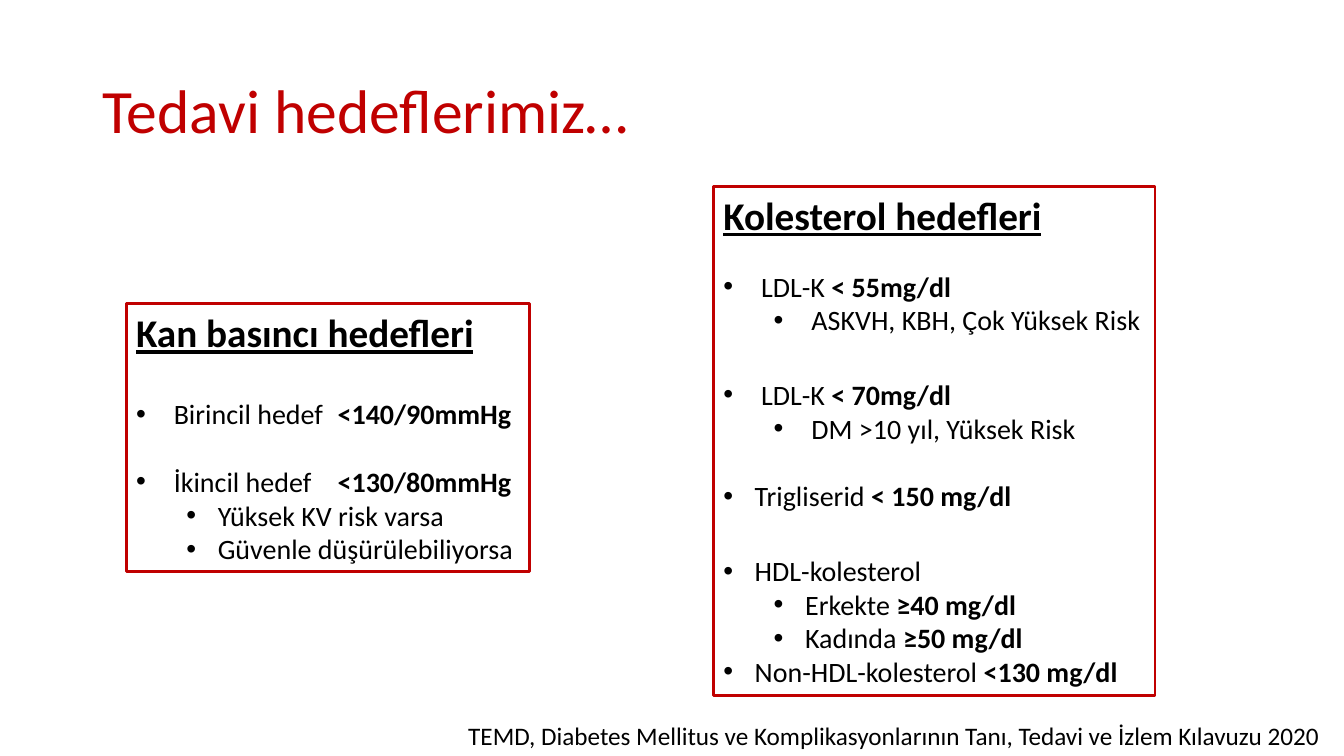
import typing

import lxml.etree
import pptx
import pptx.dml.color
import pptx.enum.shapes
import pptx.enum.text
import pptx.oxml.ns
import pptx.util

Cm = pptx.util.Cm
Pt = pptx.util.Pt
RED = "C00000"
BLACK = "000000"
FONT = "Calibri"


class Run(typing.NamedTuple):
    text: str
    bold: bool = False


class Item(typing.NamedTuple):
    runs: list[Run]
    left: float  # text indent, cm
    hang: float  # bullet hang, cm
    level: int = 0
    gap: float = 0  # space before, pt


class Panel(typing.NamedTuple):
    area: tuple[float, float, float, float]
    head: str
    items: list[Item]


class Label(typing.NamedTuple):
    area: tuple[float, float, float, float]
    text: str
    size: int
    color: str
    anchor: pptx.enum.text.MSO_ANCHOR
    space: float


def color(code: str) -> pptx.dml.color.RGBColor:
    return pptx.dml.color.RGBColor.from_string(code)


def add_run(para, text: str, size: int, tint: str = BLACK,
            bold: bool = False, under: bool = False) -> None:
    run = para.add_run()
    run.text = text
    font = run.font
    font.name, font.size = FONT, Pt(size)
    font.bold, font.underline = bold, under
    font.color.rgb = color(tint)


def add_item(para, item: Item) -> None:
    props = para._p.get_or_add_pPr()
    props.set("marL", str(Cm(item.left)))
    props.set("indent", str(-Cm(item.hang)))
    for tag, key, value in (("a:buFont", "typeface", "Arial"),
                            ("a:buChar", "char", "•")):
        mark = lxml.etree.SubElement(props, pptx.oxml.ns.qn(tag))
        mark.set(key, value)
    para.level = item.level
    para.alignment = pptx.enum.text.PP_ALIGN.LEFT
    para.space_before = Pt(item.gap)
    for run in item.runs:
        add_run(para, run.text, 20, bold=run.bold)


def add_panel(slide, panel: Panel) -> None:
    kind = pptx.enum.shapes.MSO_SHAPE.RECTANGLE
    box = slide.shapes.add_shape(kind, *map(Cm, panel.area))
    box.shadow.inherit = False
    box.fill.background()
    box.line.color.rgb = color(RED)
    box.line.width = Pt(2)
    frame = box.text_frame
    frame.word_wrap = True
    frame.vertical_anchor = pptx.enum.text.MSO_ANCHOR.TOP
    head = frame.paragraphs[0]
    head.alignment = pptx.enum.text.PP_ALIGN.LEFT
    add_run(head, panel.head, 28, bold=True, under=True)
    for item in panel.items:
        add_item(frame.add_paragraph(), item)


def add_label(slide, label: Label) -> None:
    frame = slide.shapes.add_textbox(*map(Cm, label.area)).text_frame
    frame.word_wrap = True
    frame.vertical_anchor = label.anchor
    para = frame.paragraphs[0]
    para.line_spacing = label.space
    add_run(para, label.text, label.size, label.color)


# Title and source line
ANCHOR = pptx.enum.text.MSO_ANCHOR
LABELS = [
    Label((2.33, 1.01, 29.21, 3.68), "Tedavi hedeflerimiz…",
          44, RED, ANCHOR.MIDDLE, 0.9),
    Label((11.55, 18.03, 22.32, 1.02),
          "TEMD, Diabetes Mellitus ve Komplikasyonlarının Tanı, "
          "Tedavi ve İzlem Kılavuzu 2020",
          18, BLACK, ANCHOR.TOP, 1.0),
]

# Target panels: wide and narrow bullet hangs
WIDE, SLIM = 0.95, 0.79
SUB, DEEP = 2.06, 2.22
PANELS = [
    Panel((3.18, 7.65, 10.16, 6.76), "Kan basıncı hedefleri", [
        Item([Run("Birincil hedef\t"), Run("<140/90mmHg", True)],
             WIDE, WIDE, gap=29.3),
        Item([Run("İkincil hedef \t"), Run("<130/80mmHg", True)],
             WIDE, WIDE, gap=24.4),
        Item([Run("Yüksek KV risk varsa")], SUB, SLIM, 1),
        Item([Run("Güvenle düşürülebiliyorsa")], SUB, SLIM, 1),
    ]),
    Panel((17.98, 4.7, 11.13, 12.83), "Kolesterol hedefleri", [
        Item([Run("LDL-K "), Run("< 55mg/dl", True)],
             WIDE, WIDE, gap=22),
        Item([Run("ASKVH, KBH, Çok Yüksek Risk")], DEEP, WIDE, 1),
        Item([Run("LDL-K "), Run("< 70mg/dl", True)],
             WIDE, WIDE, gap=29.3),
        Item([Run("DM >10 yıl, Yüksek Risk")], DEEP, WIDE, 1),
        Item([Run("Trigliserid "), Run("< 150 mg/dl", True)],
             SLIM, SLIM, gap=24.4),
        Item([Run("HDL-kolesterol")], SLIM, SLIM, gap=29.3),
        Item([Run("Erkekte "), Run("≥40 mg/dl", True)], SUB, SLIM, 1),
        Item([Run("Kadında "), Run("≥50 mg/dl", True)], SUB, SLIM, 1),
        Item([Run("Non-HDL-kolesterol "), Run("<130 mg/dl", True)],
             SLIM, SLIM),
    ]),
]


def main() -> None:
    deck = pptx.Presentation()
    deck.slide_width, deck.slide_height = Cm(33.87), Cm(19.05)
    slide = deck.slides.add_slide(deck.slide_layouts[6])
    title, source = LABELS
    add_label(slide, title)
    for panel in PANELS:
        add_panel(slide, panel)
    add_label(slide, source)
    deck.save("out.pptx")


if __name__ == "__main__":
    main()
